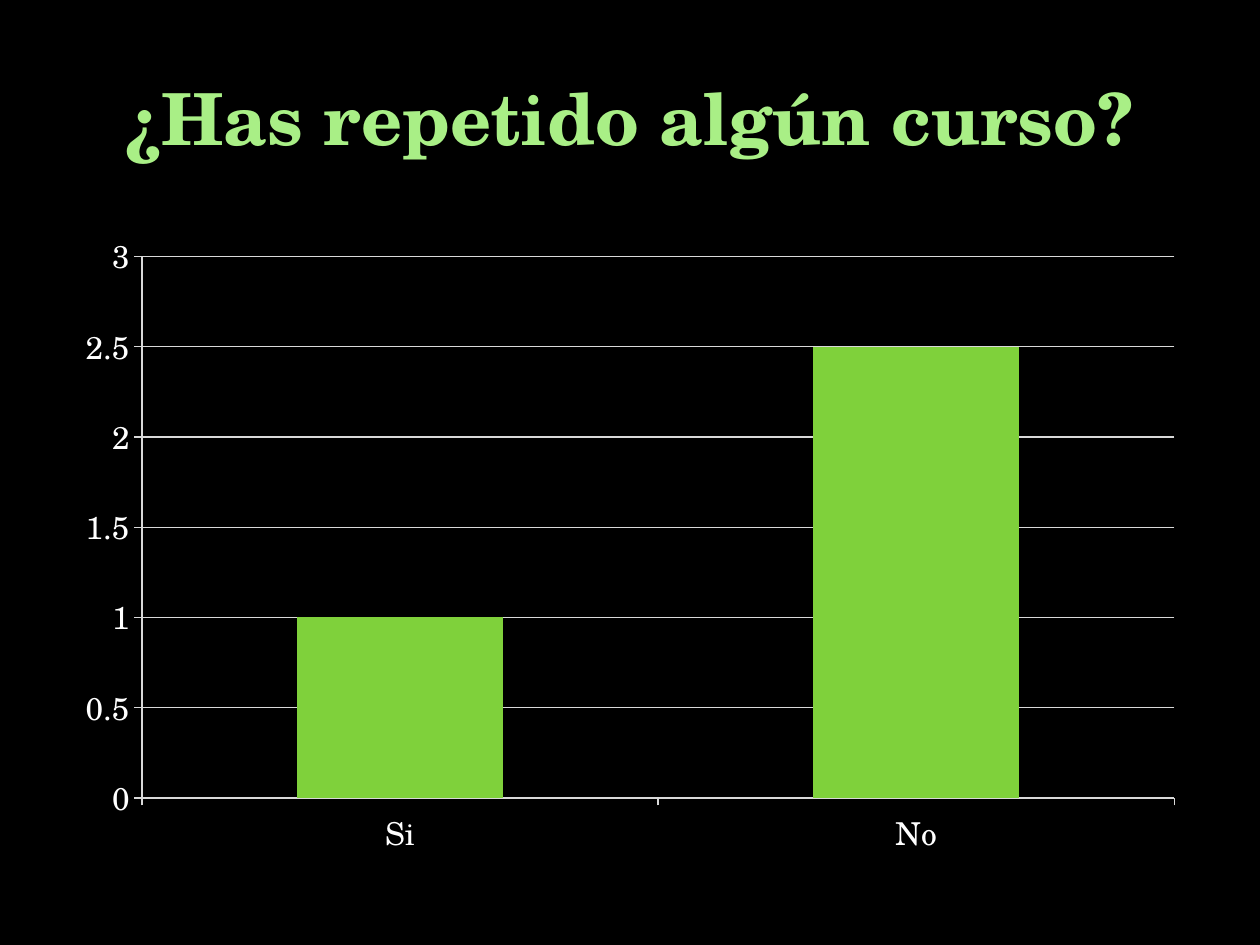
from dataclasses import dataclass

from pptx import Presentation
from pptx.chart.data import CategoryChartData
from pptx.dml.color import RGBColor as RGB
from pptx.enum.chart import XL_CHART_TYPE as ChartType, XL_TICK_MARK as Tick
from pptx.enum.text import MSO_ANCHOR as Anchor, PP_ALIGN as Align
from pptx.util import Inches, Pt


@dataclass(frozen=True)
class Theme:
    font: str = "TeX Gyre Schola"
    background: RGB = RGB(0x00, 0x00, 0x00)
    title: RGB = RGB(0xA9, 0xEF, 0x86)
    text: RGB = RGB(0xFF, 0xFF, 0xFF)
    rule: RGB = RGB(0xD9, 0xD9, 0xD9)
    bar: RGB = RGB(0x7F, 0xD1, 0x3B)
    title_size: Pt = Pt(41)
    chart_size: Pt = Pt(18)
    rule_width: Pt = Pt(0.75)


class Deck:
    """Places elements on a grid of 20 columns by 150 rows."""
    COLS, ROWS = 20, 150

    def __init__(self, theme):
        self.theme = theme
        self.prs = Presentation()
        self.prs.slide_width, self.prs.slide_height = Inches(10), Inches(7.5)

    def add_slide(self):
        self.s = self.prs.slides.add_slide(self.prs.slide_layouts[5])
        fill = self.s.background.fill
        fill.solid()
        fill.fore_color.rgb = self.theme.background

    def box(self, col, row, cols, rows):
        dx = self.prs.slide_width / self.COLS
        dy = self.prs.slide_height / self.ROWS
        return [round(v) for v in (col * dx, row * dy, cols * dx, rows * dy)]

    def format_font(self, font, size, color, bold=False):
        for name, value in {"name": self.theme.font, "size": size, "bold": bold}.items():
            setattr(font, name, value)
        font.color.rgb = color

    def format_line(self, line):
        line.color.rgb = self.theme.rule
        line.width = self.theme.rule_width

    def title(self, text, *cells):
        sp = self.s.shapes.title
        sp.left, sp.top, sp.width, sp.height = self.box(*cells)
        tf = sp.text_frame
        tf.vertical_anchor = Anchor.MIDDLE
        p = tf.paragraphs[0]
        p.alignment = Align.CENTER
        r = p.add_run()
        r.text = text
        self.format_font(r.font, self.theme.title_size, self.theme.title, bold=True)

    def column_chart(self, categories, name, values, *cells):
        data = CategoryChartData()
        data.categories = categories
        data.add_series(name, values)
        chart = self.s.shapes.add_chart(
            ChartType.COLUMN_CLUSTERED, *self.box(*cells), data).chart
        chart.has_legend = chart.has_title = False
        self.format_font(chart.font, self.theme.chart_size, self.theme.text)

        # Columns
        plot = chart.plots[0]
        plot.gap_width, plot.vary_by_categories = 150, False
        fill = plot.series[0].format.fill
        fill.solid()
        fill.fore_color.rgb = self.theme.bar

        # Axes and gridlines
        for axis in (chart.category_axis, chart.value_axis):
            axis.major_tick_mark, axis.minor_tick_mark = Tick.OUTSIDE, Tick.NONE
            self.format_line(axis.format.line)
        scale = {"minimum_scale": 0, "maximum_scale": 3, "major_unit": 0.5,
                 "has_major_gridlines": True}
        for key, value in scale.items():
            setattr(chart.value_axis, key, value)
        self.format_line(chart.value_axis.major_gridlines.format.line)


def main():
    deck = Deck(Theme())
    deck.add_slide()
    deck.title("¿Has repetido algún curso?", 1, 6, 18, 25)
    deck.column_chart(["Si", "No"], "Series 1", [1, 2.5], 1, 35, 18, 103)
    deck.prs.save("out.pptx")


if __name__ == "__main__":
    main()
